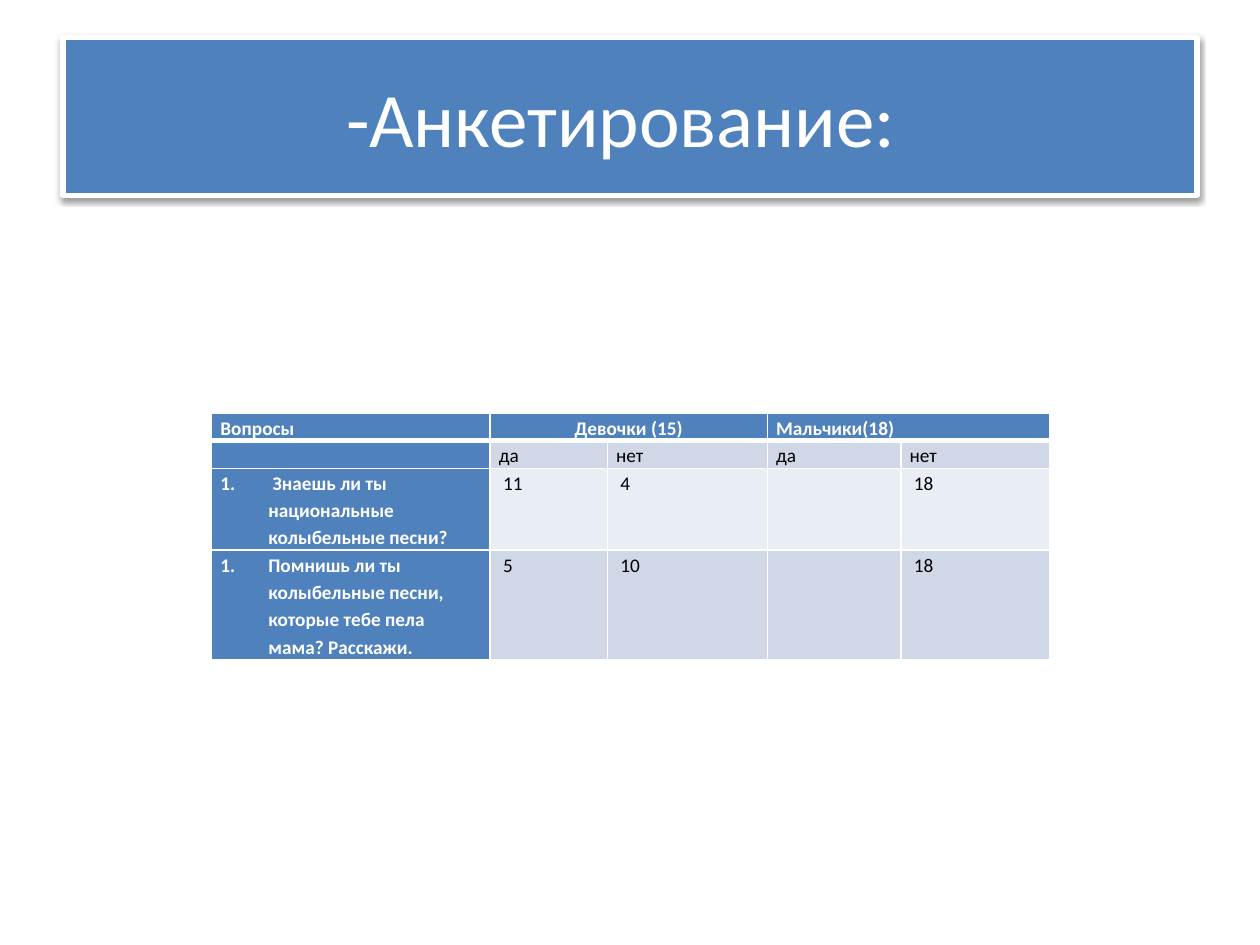
from lxml import etree
from pptx import Presentation
from pptx.dml.color import RGBColor
from pptx.enum import text
from pptx.oxml import parse_xml
from pptx.oxml.ns import nsdecls, qn
from pptx.util import Inches, Pt

FONT = "Calibri"
BLUE, WHITE, BLACK = "4F81BD", "FFFFFF", "000000"
BANDS = ["D0D8E8", "E9EDF4"]
COLS = [2.21, 0.93, 1.27, 1.06, 1.18]
HEIGHTS = [0.21, 0.22, 0.65, 0.87]
ROWS = [
    ["Вопросы", "Девочки (15)", "", "Мальчики(18)", ""],
    ["", "да", "нет", "да", "нет"],
    [" Знаешь ли ты национальные колыбельные песни?", " 11", " 4", "", " 18"],
    ["Помнишь ли ты колыбельные песни, которые тебе пела мама? Расскажи.",
     " 5", " 10", "", " 18"],
]


def rgb(color):
    return RGBColor.from_string(color)


def fill(part, color):
    part.fill.solid()
    part.fill.fore_color.rgb = rgb(color)


def set_attrs(obj, values):
    for name, value in values.items():
        setattr(obj, name, value)


def add_text(p, content, size, color, bold=False):
    r = p.add_run()
    r.text = content
    set_attrs(r.font, {"name": FONT, "size": Pt(size), "bold": bold})
    r.font.color.rgb = rgb(color)


def add_title(slide, left, top, width, height):
    sp = slide.shapes.title
    set_attrs(sp, {"left": left, "top": top, "width": width, "height": height})
    fill(sp, BLUE)
    sp.line.color.rgb = rgb(WHITE)
    sp.line.width = Pt(3)
    # Soft shadow below the banner
    sp._element.spPr.append(parse_xml(
        f'<a:effectLst {nsdecls("a")}><a:outerShdw blurRad="40000" dist="20000" '
        'dir="5400000" rotWithShape="0"><a:srgbClr val="000000">'
        '<a:alpha val="38000"/></a:srgbClr></a:outerShdw></a:effectLst>'))
    tf = sp.text_frame
    tf.vertical_anchor = text.MSO_ANCHOR.MIDDLE
    p = tf.paragraphs[0]
    p.alignment = text.PP_ALIGN.CENTER
    add_text(p, "-Анкетирование: ", 44, WHITE)


def set_borders(cell, widths):
    """Draw white borders; widths are points for left, right, top, bottom."""
    tcPr = cell._tc.get_or_add_tcPr()
    for i, (side, width) in enumerate(zip("LRTB", widths)):
        tcPr.insert(i, parse_xml(
            f'<a:ln{side} {nsdecls("a")} w="{Pt(width)}"><a:solidFill>'
            f'<a:srgbClr val="{WHITE}"/></a:solidFill></a:ln{side}>'))


def number_item(p):
    pPr = p._p.get_or_add_pPr()
    pPr.set("marL", str(Inches(0.38)))
    pPr.set("indent", str(-Inches(0.38)))
    etree.SubElement(pPr, qn("a:buFont"), typeface="+mj-lt")
    etree.SubElement(pPr, qn("a:buAutoNum"), type="arabicPeriod")


def format_cell(cell, row, col, content):
    heading = row == 0 or col == 0
    fill(cell, BLUE if heading else BANDS[(row - 1) % 2])
    set_borders(cell, [1, 1, 3 if row == 1 else 1, 3 if row == 0 else 1])
    set_attrs(cell, {"margin_left": Inches(0.07), "margin_right": Inches(0.07),
                     "margin_top": 0, "margin_bottom": 0})
    p = cell.text_frame.paragraphs[0]
    p.line_spacing = 1.15
    if row == 0 and col == 1:
        p.alignment = text.PP_ALIGN.CENTER
    if row > 1 and col == 0:
        number_item(p)
    if content:
        add_text(p, content, 11, WHITE if heading else BLACK, heading)
    else:
        etree.SubElement(p._p, qn("a:endParaRPr"), sz="1100")


def add_survey(slide, left, top, width, height):
    table = slide.shapes.add_table(len(ROWS), len(COLS), left, top, width, height).table
    for column, share in zip(table.columns, COLS):
        column.width = int(width * share / sum(COLS))
    for row, share in zip(table.rows, HEIGHTS):
        row.height = int(height * share / sum(HEIGHTS))
    for i, values in enumerate(ROWS):
        for j, value in enumerate(values):
            format_cell(table.cell(i, j), i, j, value)
    # Each group heading spans its yes and no columns
    for j in (1, 3):
        table.cell(0, j).merge(table.cell(0, j + 1))


def main():
    prs = Presentation()
    prs.slide_width, prs.slide_height = Inches(10), Inches(7.5)
    slide = prs.slides.add_slide(prs.slide_layouts[5])
    add_title(slide, Inches(0.5), Inches(0.3), Inches(9), Inches(1.25))
    add_survey(slide, Inches(1.68), Inches(3.28), Inches(6.65), Inches(1.95))
    prs.save("out.pptx")


if __name__ == "__main__":
    main()
